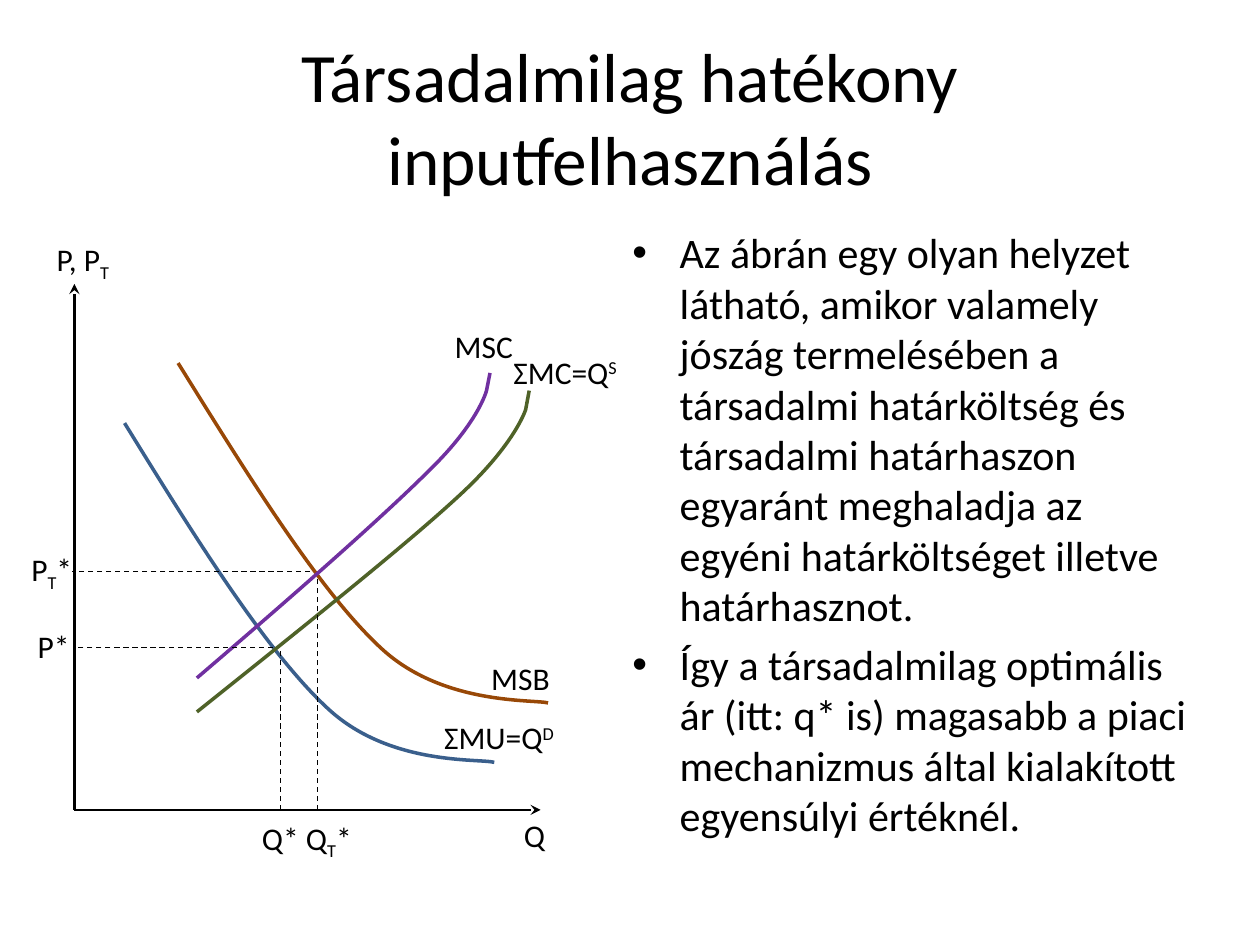
from lxml.etree import SubElement
from pptx import Presentation
from pptx.dml.color import RGBColor
from pptx.enum.dml import MSO_LINE_DASH_STYLE as Dash
from pptx.enum.shapes import MSO_CONNECTOR as Connector
from pptx.enum.text import MSO_ANCHOR as Anchor, MSO_AUTO_SIZE as AutoSize, PP_ALIGN as Align
from pptx.oxml.ns import qn
from pptx.util import Pt

COLORS = {
    "ink": "000000",
    "private_demand": "3A5F8C",
    "social_benefit": "984807",
    "private_supply": "4F6228",
    "social_cost": "7030A0",
}
SUB, NORMAL, SUPER = -25000, 0, 30000
ORIGIN = (42.5, 462.8)
AXIS_ENDS = [(42.5, 162.2), (309, 462.8)]
GUIDES = [
    ((156, 370), (42.5, 370)),
    ((160.2, 462.8), (160.2, 370)),
    ((177, 326.6), (41, 326.6)),
    ((181.5, 462.8), (181.5, 330.5)),
]
CURVES = [
    ("private_demand", (71.2, 241.8), [
        ((111.6, 307.4), (152.6, 373), (187.9, 405.4)),
        ((223.2, 437.8), (274.3, 433.4), (282.5, 435.7))]),
    ("social_benefit", (101.8, 207.5), [
        ((142.6, 273), (182.9, 338.4), (218.2, 370.8)),
        ((253.4, 403.2), (305.3, 399.6), (313.2, 401.7))]),
    ("private_supply", (112.5, 406.8), [
        ((172.8, 358.6), (232.6, 311), (263.5, 282.2)),
        ((294.5, 253.4), (300.4, 234), (300.4, 234)),
        ((302.4, 223.2),)]),
    ("social_cost", (112.5, 387.4), [
        ((165.6, 342), (218.2, 295.9), (245.5, 268.6)),
        ((273.6, 241.2), (278, 223.2), (278, 223.2)),
        ((280, 213.1),)]),
]
LABELS = [
    ((25.2, 133.7, 51, 29), [("P, P", NORMAL), ("T", SUB)]),
    ((292.3, 463, 60, 29), [("Q", NORMAL)]),
    ((246.7, 406.8, 79, 29), [("ΣMU=Q", NORMAL), ("D", SUPER)]),
    ((273.6, 373, 79, 29), [("MSB", NORMAL)]),
    ((142.6, 464.2, 75.6, 29), [("Q* Q", NORMAL), ("T", SUB), ("*", NORMAL)]),
    ((10.8, 311, 65.5, 44), [("P", NORMAL), ("T", SUB), ("*", NORMAL)]),
    ((14.4, 355, 51, 29), [("P*", NORMAL)]),
    ((252.7, 183.4, 79, 29), [("MSC", NORMAL)]),
    ((286.3, 198, 79, 29), [("ΣMC=Q", NORMAL), ("S", SUPER)]),
]
TITLE = "Társadalmilag hatékony inputfelhasználás"
EXPLANATION = [
    "Az ábrán egy olyan helyzet látható, amikor valamely jószág termelésében a "
    "társadalmi határköltség és társadalmi határhaszon egyaránt meghaladja az "
    "egyéni határköltséget illetve határhasznot.",
    "Így a társadalmilag optimális ár (itt: q* is) magasabb a piaci mechanizmus "
    "által kialakított egyensúlyi értéknél.",
]


def apply_format(target, values):
    for attribute, value in values.items():
        setattr(target, attribute, value)


def format_run(run, size):
    apply_format(run.font, {"name": "Calibri", "size": Pt(size)})
    run.font.color.rgb = RGBColor.from_string(COLORS["ink"])


def fill_placeholder(holder, box, paragraphs, size, frame_format, align):
    left, top, width, height = map(Pt, box)
    apply_format(holder, {"left": left, "top": top, "width": width, "height": height})
    frame = holder.text_frame
    apply_format(frame, {"word_wrap": True, "auto_size": AutoSize.NONE, **frame_format})
    for index, wording in enumerate(paragraphs):
        paragraph = frame.add_paragraph() if index else frame.paragraphs[0]
        paragraph.alignment = align
        run = paragraph.add_run()
        run.text = wording
        format_run(run, size)


def add_label(slide, box, parts):
    frame = slide.shapes.add_textbox(*map(Pt, box)).text_frame
    apply_format(frame, {"word_wrap": True, "auto_size": AutoSize.SHAPE_TO_FIT_TEXT})
    for wording, baseline in parts:
        run = frame.paragraphs[0].add_run()
        run.text = wording
        format_run(run, 18)
        if baseline:
            run.font._element.set("baseline", str(baseline))


def format_line(line, color, values):
    line.color.rgb = RGBColor.from_string(COLORS[color])
    apply_format(line, values)


def add_straight(slide, start, end, values, arrow=False):
    straight = slide.shapes.add_connector(Connector.STRAIGHT, *map(Pt, start + end))
    format_line(straight.line, "ink", values)
    properties = straight._element.spPr
    if arrow:
        SubElement(properties.find(qn("a:ln")), qn("a:tailEnd"), type="stealth")
    SubElement(properties, qn("a:effectLst"))


def bend_segments(curve, segments):
    outline = next(curve._element.iter(qn("a:path")))
    steps = iter(outline.findall(qn("a:lnTo")))
    for segment in segments:
        members = [next(steps) for _ in segment]
        if len(members) == 3:
            bend = SubElement(outline, qn("a:cubicBezTo"))
            for member in members:
                bend.append(member[0])
                outline.remove(member)
        else:
            outline.append(members[0])


def add_curve(slide, color, start, segments):
    builder = slide.shapes.build_freeform(*map(Pt, start))
    for segment in segments:
        builder.add_line_segments([tuple(map(Pt, point)) for point in segment], close=False)
    curve = builder.convert_to_shape()
    bend_segments(curve, segments)
    curve.shadow.inherit = False
    curve.fill.background()
    format_line(curve.line, color, {"width": Pt(2)})


def main():
    deck = Presentation()
    apply_format(deck, {"slide_width": Pt(720), "slide_height": Pt(540)})
    slide = deck.slides.add_slide(deck.slide_layouts[1])
    fill_placeholder(slide.shapes.title, (36, 21.6, 648, 90), [TITLE], 39.6,
                     {"vertical_anchor": Anchor.MIDDLE}, Align.CENTER)
    fill_placeholder(slide.placeholders[1], (354.2, 126, 334.8, 382.3), EXPLANATION, 24,
                     {"vertical_anchor": Anchor.TOP}, Align.LEFT)
    for end in AXIS_ENDS:
        add_straight(slide, ORIGIN, end, {"width": Pt(1.5)}, arrow=True)
    for curve in CURVES:
        add_curve(slide, *curve)
    for start, end in GUIDES:
        add_straight(slide, start, end, {"width": Pt(0.75), "dash_style": Dash.DASH})
    for box, parts in LABELS:
        add_label(slide, box, parts)
    deck.save("out.pptx")


if __name__ == "__main__":
    main()
